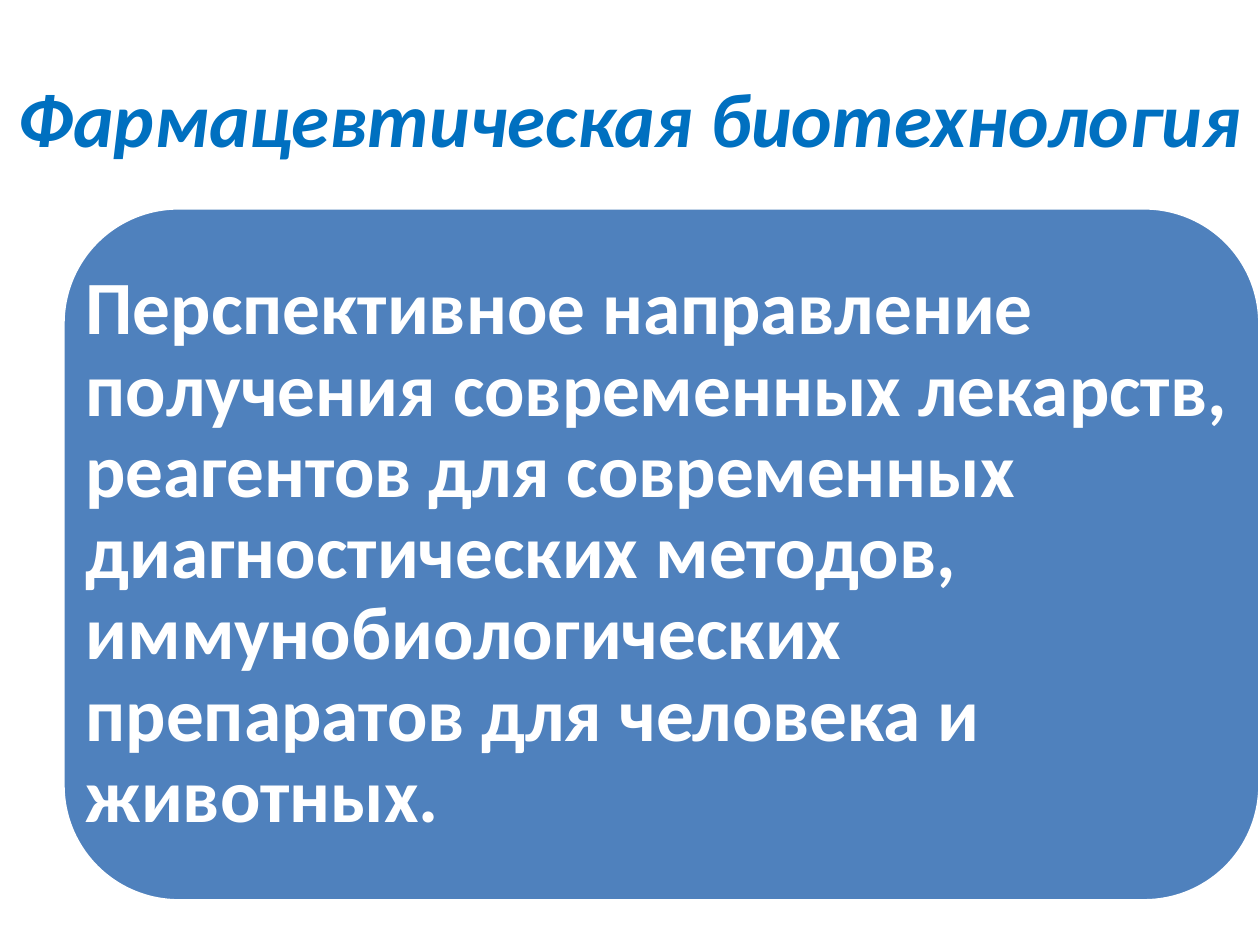
from pptx import Presentation
from pptx.dml.color import RGBColor
from pptx.enum import shapes, text
from pptx.util import Inches, Pt

TITLE_BLUE = RGBColor(0x00, 0x70, 0xC0)
PANEL_BLUE = RGBColor(0x4F, 0x81, 0xBD)
WHITE = RGBColor(0xFF, 0xFF, 0xFF)
FONT = "Calibri"
PANEL_BOX = [Inches(v) for v in (0.5, 1.65, 9.5, 5.5)]


def add_run(p, content, size, color, italic=False):
    r = p.add_run()
    r.text = content
    r.font.name = FONT
    r.font.size = Pt(size)
    r.font.bold = True
    r.font.italic = italic
    r.font.color.rgb = color


def set_title(s, content):
    sp = s.shapes.title
    sp.left, sp.top = Inches(0), Inches(0.3)
    sp.width, sp.height = Inches(10), Inches(1.25)
    tf = sp.text_frame
    tf.word_wrap = True
    tf.vertical_anchor = text.MSO_ANCHOR.MIDDLE
    p = tf.paragraphs[0]
    p.alignment = text.PP_ALIGN.CENTER
    add_run(p, content, 44, TITLE_BLUE, italic=True)


def add_panel(group):
    sp = group.shapes.add_shape(shapes.MSO_SHAPE.ROUNDED_RECTANGLE, *PANEL_BOX)
    sp.shadow.inherit = False
    sp.fill.solid()
    sp.fill.fore_color.rgb = PANEL_BLUE
    sp.line.color.rgb = WHITE
    sp.line.width = Pt(2)


def add_panel_text(group, content):
    tf = group.shapes.add_textbox(*PANEL_BOX).text_frame
    tf.word_wrap = True
    tf.vertical_anchor = text.MSO_ANCHOR.MIDDLE
    tf.margin_left = tf.margin_right = Inches(0.18)
    tf.margin_top = tf.margin_bottom = Inches(0.18)
    p = tf.paragraphs[0]
    p.alignment = text.PP_ALIGN.LEFT
    p.line_spacing = 0.9
    add_run(p, content, 43, WHITE)


def main():
    prs = Presentation()
    prs.slide_width, prs.slide_height = Inches(10), Inches(7.5)
    s = prs.slides.add_slide(prs.slide_layouts[5])
    set_title(s, "Фармацевтическая биотехнология")
    group = s.shapes.add_group_shape()
    add_panel(group)
    add_panel_text(
        group,
        "Перспективное направление получения современных лекарств, "
        "реагентов для современных диагностических методов, "
        "иммунобиологических препаратов для человека и животных.",
    )
    prs.save("out.pptx")


if __name__ == "__main__":
    main()
